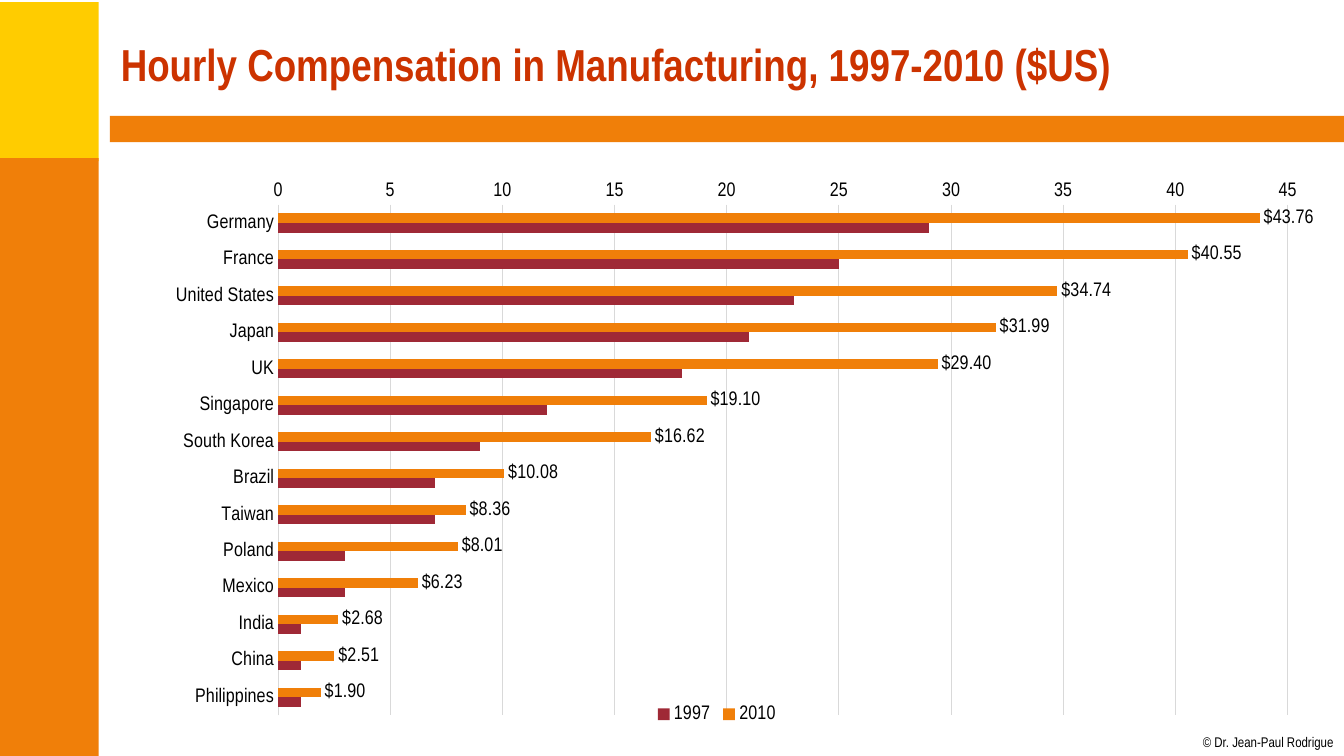
from dataclasses import dataclass

from lxml.etree import SubElement
from pptx import Presentation
from pptx.chart.data import CategoryChartData
from pptx.dml.color import RGBColor as Rgb
from pptx.enum.chart import XL_CHART_TYPE as ChartType
from pptx.enum.chart import XL_LABEL_POSITION as LabelPos
from pptx.enum.chart import XL_LEGEND_POSITION as LegendPos
from pptx.enum.chart import XL_TICK_MARK as Tick
from pptx.enum.shapes import MSO_SHAPE as Preset
from pptx.enum.text import MSO_ANCHOR as Anchor
from pptx.oxml.ns import qn
from pptx.util import Emu, Pt


@dataclass(frozen=True)
class Theme:
    font: str = "Arial Narrow"
    yellow: str = "FFCC00"
    orange: str = "F07F09"
    maroon: str = "9F2936"
    heading: str = "CC3300"
    ink: str = "000000"
    grid: str = "D9D9D9"
    title_size: int = 32
    chart_size: int = 14
    credit_size: int = 10
    rule_width: float = 0.75


THEME = Theme()
EMU_PER_PX = 9144
BLANK_LAYOUT = 6

COMPENSATION = [
    ("Germany", 43.76, 29),
    ("France", 40.55, 25),
    ("United States", 34.74, 23),
    ("Japan", 31.99, 21),
    ("UK", 29.40, 18),
    ("Singapore", 19.10, 12),
    ("South Korea", 16.62, 9),
    ("Brazil", 10.08, 7),
    ("Taiwan", 8.36, 7),
    ("Poland", 8.01, 3),
    ("Mexico", 6.23, 3),
    ("India", 2.68, 1),
    ("China", 2.51, 1),
    ("Philippines", 1.90, 1),
]


def px(*lengths):
    return [Emu(length * EMU_PER_PX) for length in lengths]


def set_font(font, size, color, bold=False):
    font.name = THEME.font
    font.size = Pt(size)
    font.bold = bold
    font.color.rgb = Rgb.from_string(color)


def paint(fill, color):
    fill.solid()
    fill.fore_color.rgb = Rgb.from_string(color)


def rule(line):
    line.width = Pt(THEME.rule_width)
    line.color.rgb = Rgb.from_string(THEME.grid)


def add_band(slide, place, color):
    band = slide.shapes.add_shape(Preset.RECTANGLE, *px(*place))
    band.shadow.inherit = False
    paint(band.fill, color)
    band.line.fill.background()


def add_text(slide, text, place, *, size, color, bold=False, wrap=True,
             inset=(10, 5), anchor=Anchor.TOP):
    frame = slide.shapes.add_textbox(*px(*place)).text_frame
    frame.word_wrap = wrap
    frame.vertical_anchor = anchor
    side, edge = px(*inset)
    frame.margin_left = frame.margin_right = side
    frame.margin_top = frame.margin_bottom = edge
    run = frame.paragraphs[0].add_run()
    run.text = text
    set_font(run.font, size, color, bold)


def place_plot(chart, x, y, w, h):
    plot_area = chart.plots[0]._element.getparent()
    for old in plot_area.findall(qn("c:layout")):
        plot_area.remove(old)
    layout = SubElement(plot_area, qn("c:layout"))
    plot_area.insert(0, layout)
    manual = SubElement(layout, qn("c:manualLayout"))
    settings = [("layoutTarget", "inner"), ("xMode", "edge"), ("yMode", "edge"),
                ("x", x), ("y", y), ("w", w), ("h", h)]
    for tag, value in settings:
        SubElement(manual, qn(f"c:{tag}")).set("val", str(value))


def style_axes(chart):
    countries, dollars = chart.category_axis, chart.value_axis
    for axis in (countries, dollars):
        axis.major_tick_mark = axis.minor_tick_mark = Tick.NONE
        set_font(axis.tick_labels.font, THEME.chart_size, THEME.ink)
    countries.reverse_order = True
    rule(countries.format.line)
    dollars.minimum_scale, dollars.maximum_scale = 0, 45
    dollars.major_unit = 5
    dollars.format.line.fill.background()
    dollars.has_major_gridlines = True
    rule(dollars.major_gridlines.format.line)


def label_series(series):
    labels = series.data_labels
    labels.show_value = True
    labels.position = LabelPos.OUTSIDE_END
    labels.number_format = "\\$#,##0.00"
    labels.number_format_is_linked = False
    set_font(labels.font, THEME.chart_size, THEME.ink)


def add_compensation_chart(slide, place):
    countries, pay_2010, pay_1997 = zip(*COMPENSATION)
    data = CategoryChartData()
    data.categories = countries
    data.add_series("2010", pay_2010)
    data.add_series("1997", pay_1997)
    chart = slide.shapes.add_chart(
        ChartType.BAR_CLUSTERED, *px(*place), data).chart
    set_font(chart.font, THEME.chart_size, THEME.ink)
    chart.has_title = False
    chart.has_legend = True
    chart.legend.position = LegendPos.BOTTOM
    chart.legend.include_in_layout = False
    set_font(chart.legend.font, THEME.chart_size, THEME.ink)
    bars = chart.plots[0]
    bars.gap_width = 182
    bars.vary_by_categories = False
    for series, color in zip(bars.series, (THEME.orange, THEME.maroon)):
        paint(series.format.fill, color)
        series.invert_if_negative = False
    label_series(bars.series[0])
    style_axes(chart)
    place_plot(chart, 0.138, 0.104, 0.833, 0.875)


def main():
    deck = Presentation()
    deck.slide_width, deck.slide_height = px(1333, 750)
    slide = deck.slides.add_slide(deck.slide_layouts[BLANK_LAYOUT])
    add_band(slide, (-2, 2, 100, 158), THEME.yellow)
    add_band(slide, (-2, 157, 100, 593), THEME.orange)
    add_band(slide, (109, 115, 1224, 26), THEME.orange)
    add_text(slide, "© Dr. Jean-Paul Rodrigue", (1193, 728, 131, 17),
             size=THEME.credit_size, color=THEME.ink, wrap=False, inset=(0, 0))
    add_text(slide, "Hourly Compensation in Manufacturing, 1997-2010 ($US)",
             (110, 11, 1200, 104), size=THEME.title_size,
             color=THEME.heading, bold=True, anchor=Anchor.MIDDLE)
    add_compensation_chart(slide, (110, 143, 1202, 579))
    deck.save("out.pptx")


if __name__ == "__main__":
    main()
